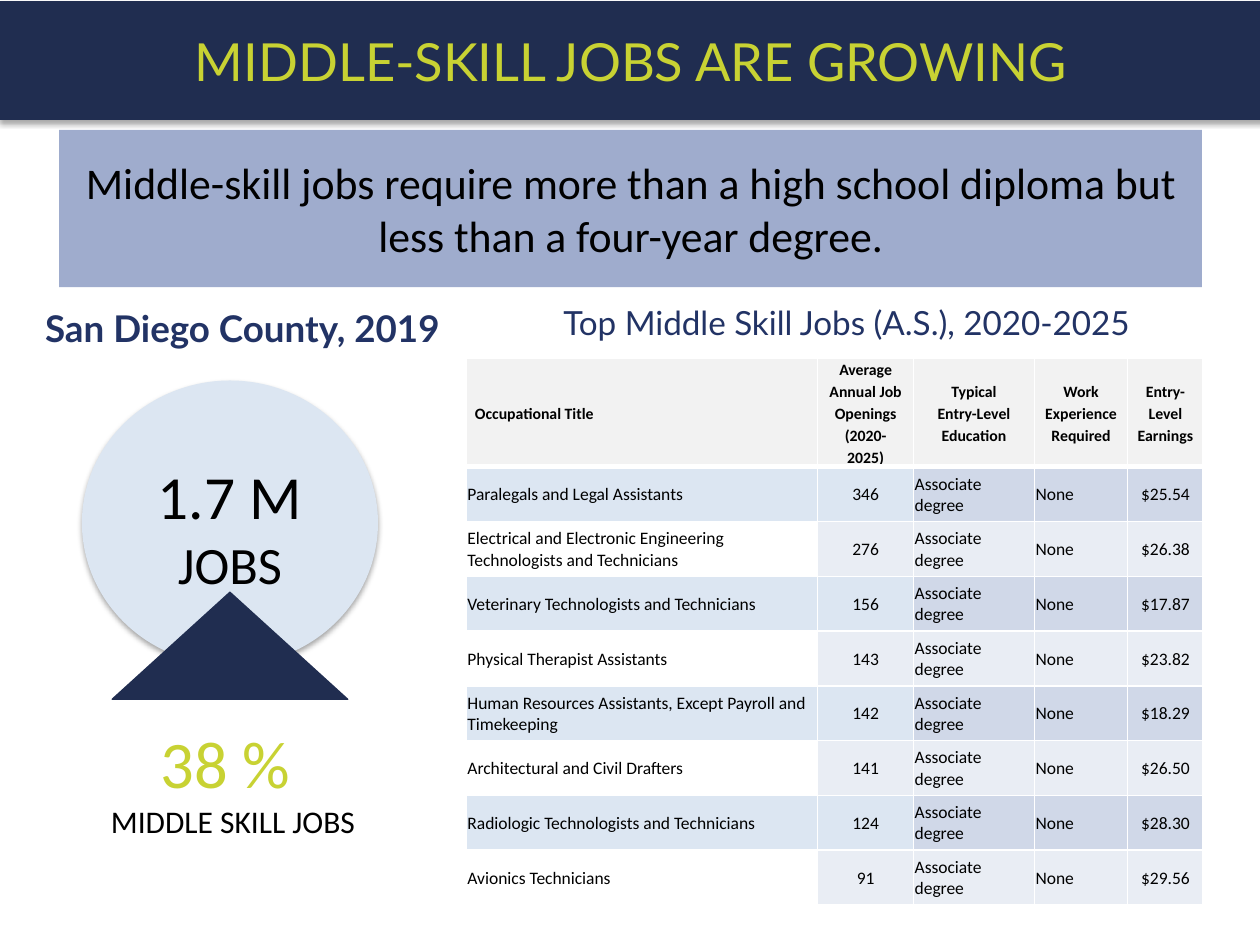
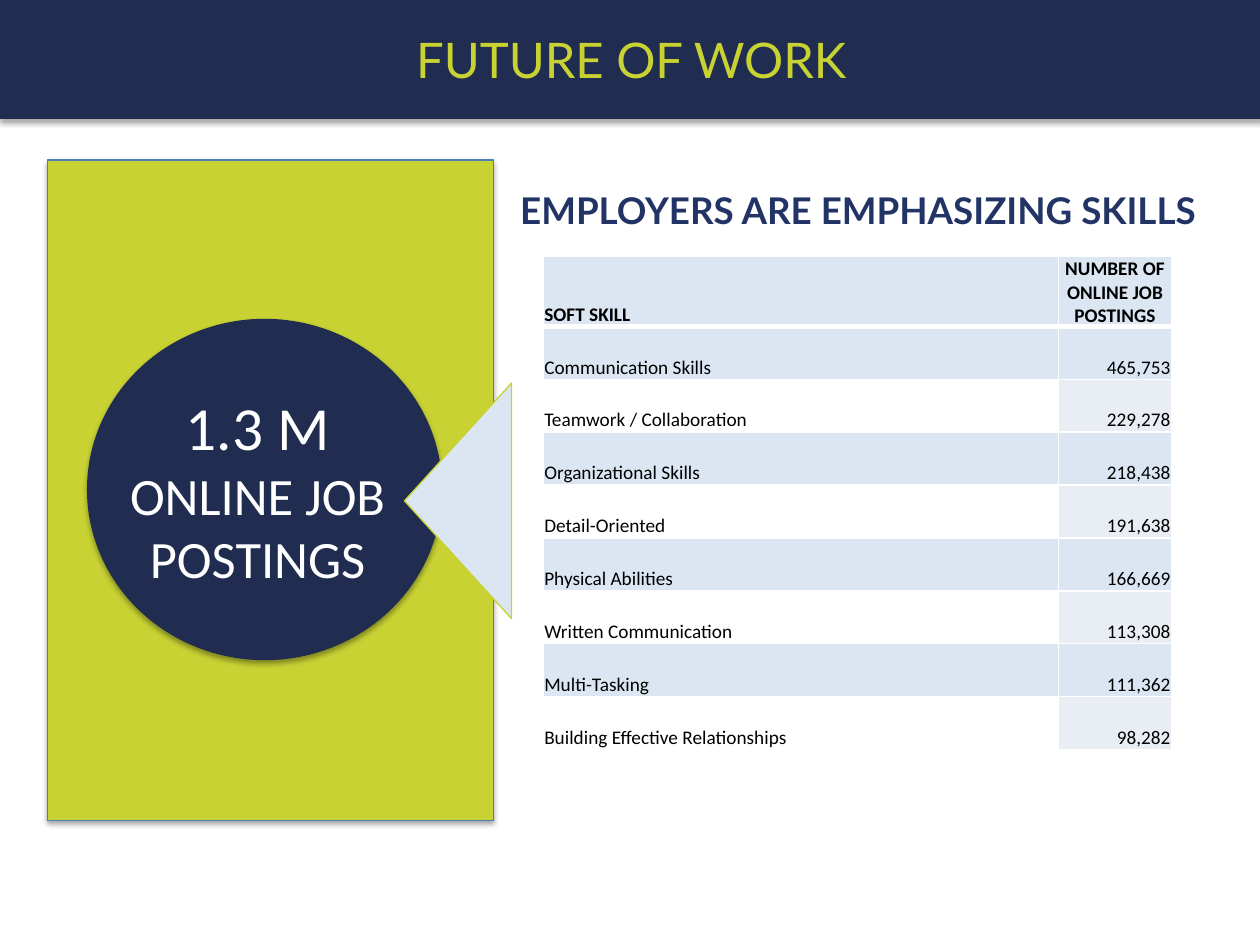
from lxml import etree
from pptx import Presentation
from pptx.dml.color import RGBColor
from pptx.enum import shapes, text
from pptx.oxml import ns
from pptx.util import Inches, Pt

NAVY = RGBColor(0x20, 0x2D, 0x50)
LIME = RGBColor(0xC8, 0xD2, 0x33)
HEADING_BLUE = RGBColor(0x22, 0x33, 0x65)
BANNER_BLUE = RGBColor(0x3C, 0x56, 0x9A)
OUTLINE_BLUE = RGBColor(0x4B, 0x7E, 0xBC)
PALE_BLUE = RGBColor(0xDC, 0xE6, 0xF2)
BAND_BLUE = RGBColor(0xD0, 0xD8, 0xE8)
BAND_GREY = RGBColor(0xE9, 0xED, 0xF4)
HEADER_GREY = RGBColor(0xF2, 0xF2, 0xF2)
BLACK = RGBColor(0, 0, 0)
WHITE = RGBColor(0xFF, 0xFF, 0xFF)

LEFT, CENTER, RIGHT = text.PP_ALIGN.LEFT, text.PP_ALIGN.CENTER, text.PP_ALIGN.RIGHT
TOP, MIDDLE, BOTTOM = text.MSO_ANCHOR.TOP, text.MSO_ANCHOR.MIDDLE, text.MSO_ANCHOR.BOTTOM
SHAPE = shapes.MSO_SHAPE


def write(frame, content, sizes, colors, font="Calibri", bold=False, align=CENTER, anchor=TOP):
    frame.word_wrap = True
    frame.vertical_anchor = anchor
    frame.text = content
    for index, paragraph in enumerate(frame.paragraphs):
        paragraph.alignment = align
        for run in paragraph.runs:
            run.font.name = font
            run.font.size = Pt(sizes[index % len(sizes)])
            run.font.color.rgb = colors[index % len(colors)]
            run.font.bold = bold


def style_shape(shape, fill, line, shadowed):
    shape.fill.solid()
    shape.fill.fore_color.rgb = fill
    if line is None:
        shape.line.fill.background()
    else:
        shape.line.color.rgb = line
        shape.line.width = Pt(0.75)
    shape.shadow.inherit = False
    if shadowed:
        effects = shape._element.spPr.find(ns.qn("a:effectLst"))
        shadow = etree.SubElement(effects, ns.qn("a:outerShdw"), blurRad=str(Pt(3.1)),
                                  dist=str(Pt(1.8)), dir="5400000", rotWithShape="0")
        color = etree.SubElement(shadow, ns.qn("a:srgbClr"), val="000000")
        etree.SubElement(color, ns.qn("a:alpha"), val="35000")


presentation = Presentation()
presentation.slide_width = Inches(10)
presentation.slide_height = Inches(7.5)

slides = []
for title_text, title_top, title_size in [("MIDDLE-SKILL JOBS ARE GROWING", 0.01, 30),
                                          ("FUTURE OF WORK", 0, 28)]:
    slide = presentation.slides.add_slide(presentation.slide_layouts[5])
    title = slide.shapes.title
    title.left, title.top = Inches(0), Inches(title_top)
    title.width, title.height = Inches(10.02), Inches(0.94)
    style_shape(title, NAVY, NAVY, True)
    title.text_frame.auto_size = text.MSO_AUTO_SIZE.NONE
    write(title.text_frame, title_text, [title_size], [LIME], "Lato", anchor=MIDDLE)
    slides.append(slide)
jobs_slide, future_slide = slides

banner = jobs_slide.shapes.add_shape(SHAPE.RECTANGLE, Inches(0.47), Inches(1.03), Inches(9.07), Inches(1.25))
style_shape(banner, BANNER_BLUE, None, False)
banner_color = banner._element.spPr.find(".//" + ns.qn("a:srgbClr"))
etree.SubElement(banner_color, ns.qn("a:alpha"), val="49000")
write(banner.text_frame,
      "Middle-skill jobs require more than a high school diploma but less than a four-year degree.",
      [25], [BLACK], anchor=MIDDLE)

for slide, kind, box, fill, line, shadowed, rotation in [
    (jobs_slide, SHAPE.OVAL, (0.65, 3.02, 2.35, 2.26), PALE_BLUE, None, True, 0),
    (jobs_slide, SHAPE.ISOSCELES_TRIANGLE, (0.89, 4.7, 1.87, 0.85), NAVY, NAVY, False, 0),
    (future_slide, SHAPE.RECTANGLE, (0.38, 1.27, 3.54, 5.24), LIME, OUTLINE_BLUE, True, 0),
    (future_slide, SHAPE.OVAL, (0.69, 2.53, 2.82, 2.71), NAVY, None, True, 0),
    (future_slide, SHAPE.ISOSCELES_TRIANGLE, (2.7, 3.55, 1.87, 0.85), PALE_BLUE, LIME, False, 270),
]:
    shape = slide.shapes.add_shape(kind, *map(Inches, box))
    style_shape(shape, fill, line, shadowed)
    shape.rotation = rotation

for slide, box, content, sizes, colors, font, bold, align in [
    (jobs_slide, (0.26, 2.38, 3.43, 0.45), "San Diego County, 2019", [21], [HEADING_BLUE], "Lato", True, LEFT),
    (jobs_slide, (0.89, 3.59, 1.87, 1.19), "1.7 M\nJOBS", [35, 30], [BLACK], "Calibri", False, CENTER),
    (jobs_slide, (0.47, 5.68, 2.76, 1.04), "38 % \nMIDDLE SKILL JOBS", [38, 18], [LIME, BLACK],
     "Calibri", False, CENTER),
    (jobs_slide, (3.7, 2.35, 6.04, 0.42), "Top Middle Skill Jobs (A.S.), 2020-2025", [19], [HEADING_BLUE],
     "Lato", False, CENTER),
    (future_slide, (3.69, 1.44, 6.24, 0.45), "EMPLOYERS ARE EMPHASIZING SKILLS", [21], [HEADING_BLUE],
     "Lato", True, CENTER),
    (future_slide, (0.87, 3.04, 2.35, 1.7), "1.3 M\nONLINE JOB POSTINGS", [35, 30], [WHITE],
     "Calibri", False, CENTER),
]:
    text_box = slide.shapes.add_textbox(*map(Inches, box))
    write(text_box.text_frame, content, sizes, colors, font, bold, align)

occupations = [
    ("Paralegals and Legal Assistants", "346", "$25.54"),
    ("Electrical and Electronic Engineering Technologists and Technicians", "276", "$26.38"),
    ("Veterinary Technologists and Technicians", "156", "$17.87"),
    ("Physical Therapist Assistants", "143", "$23.82"),
    ("Human Resources Assistants, Except Payroll and Timekeeping", "142", "$18.29"),
    ("Architectural and Civil Drafters", "141", "$26.50"),
    ("Radiologic Technologists and Technicians", "124", "$28.30"),
    ("Avionics Technicians", "91", "$29.56"),
]
occupation_rows = [
    ("Occupational Title", "Average Annual Job Openings\n(2020-2025)", "Typical\nEntry-Level\nEducation",
     "Work Experience Required", "Entry-Level Earnings"),
] + [(name, openings, "Associate degree", "None", earnings) for name, openings, earnings in occupations]

skill_rows = [
    ("SOFT SKILL", "NUMBER OF ONLINE JOB POSTINGS"),
    ("Communication Skills", "465,753"),
    ("Teamwork / Collaboration", "229,278"),
    ("Organizational Skills", "218,438"),
    ("Detail-Oriented", "191,638"),
    ("Physical Abilities", "166,669"),
    ("Written Communication", "113,308"),
    ("Multi-Tasking", "111,362"),
    ("Building Effective Relationships", "98,282"),
]

for (slide, rows, left, top, widths, header_height, row_height, header_size, body_size,
     header_fill, header_inset, header_spacing, anchor, alignments) in [
    (jobs_slide, occupation_rows, 3.7, 2.84, [2.79, 0.76, 0.96, 0.74, 0.6], 0.77, 0.435, 9, 10,
     HEADER_GREY, 0.07, 1.15, MIDDLE, [LEFT, CENTER, LEFT, LEFT, CENTER]),
    (future_slide, skill_rows, 4.31, 2.03, [4.09, 0.9], 0.42, 0.42, 11, 11,
     PALE_BLUE, 0.01, 1, BOTTOM, [LEFT, RIGHT]),
]:
    heights = [header_height] + [row_height] * (len(rows) - 1)
    table = slide.shapes.add_table(len(rows), len(widths), Inches(left), Inches(top),
                                   Inches(sum(widths)), Inches(sum(heights))).table
    table.horz_banding = False
    for column, width in zip(table.columns, widths):
        column.width = Inches(width)
    for row_index, values in enumerate(rows):
        table.rows[row_index].height = Inches(heights[row_index])
        is_header = row_index == 0
        for column_index, value in enumerate(values):
            cell = table.cell(row_index, column_index)
            cell.margin_left = cell.margin_right = Inches(header_inset if is_header else 0.01)
            cell.margin_top = Inches(0 if is_header and header_spacing > 1 else 0.01)
            cell.margin_bottom = 0
            align = alignments[column_index]
            if is_header and column_index > 0:
                align = CENTER
            write(cell.text_frame, value, [header_size if is_header else body_size], [BLACK],
                  bold=is_header, align=align)
            cell.vertical_anchor = anchor
            if is_header:
                for paragraph in cell.text_frame.paragraphs:
                    paragraph.line_spacing = header_spacing
                fill = header_fill
            elif row_index % 2:
                fill = PALE_BLUE if column_index < 2 else BAND_BLUE
            else:
                fill = BAND_GREY if column_index else None
            if fill is None:
                cell.fill.background()
            else:
                cell.fill.solid()
                cell.fill.fore_color.rgb = fill
            properties = cell._tc.get_or_add_tcPr()
            for position, side in enumerate(["lnL", "lnR", "lnT", "lnB"]):
                under_header = (row_index, side) in [(0, "lnB"), (1, "lnT")]
                border = etree.Element(ns.qn("a:" + side), w=str(Pt(3 if under_header else 1)))
                border_fill = etree.SubElement(border, ns.qn("a:solidFill"))
                etree.SubElement(border_fill, ns.qn("a:srgbClr"), val=str(WHITE))
                properties.insert(position, border)

presentation.save("out.pptx")
